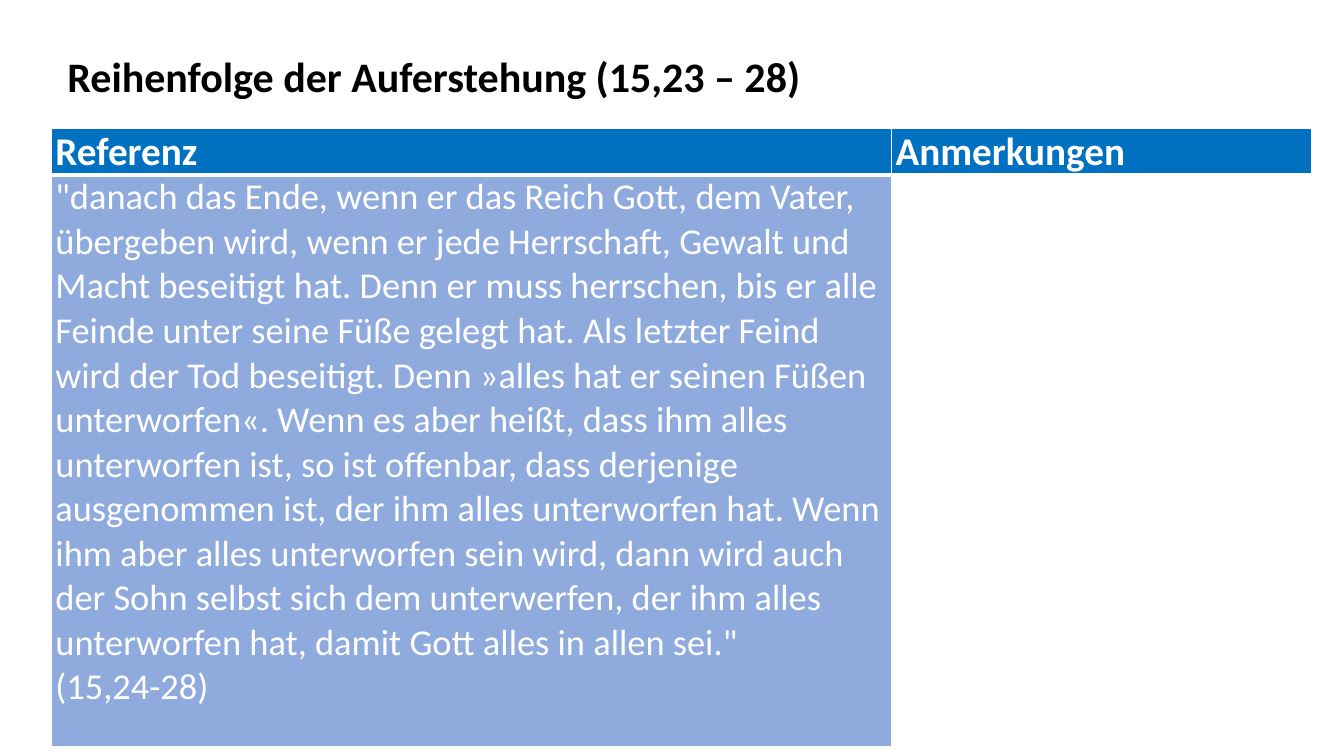
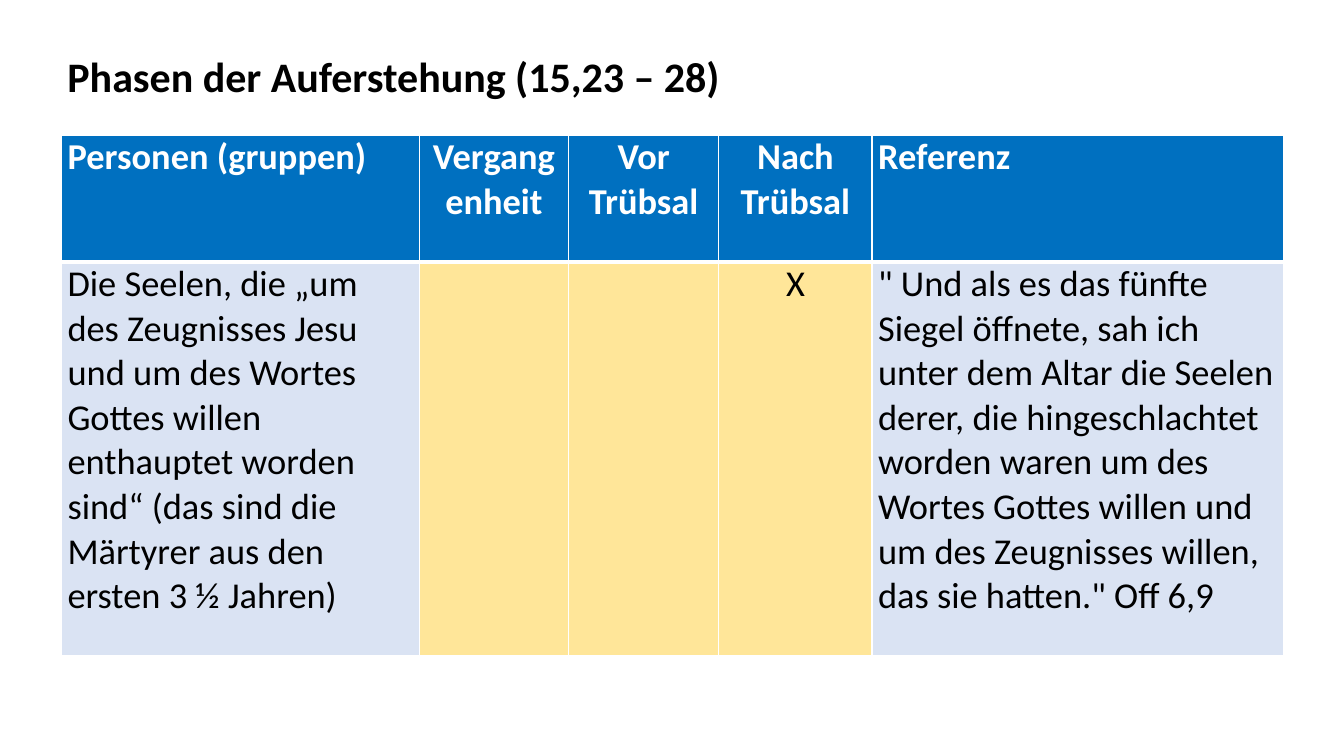
from lxml import etree
from pptx import Presentation
from pptx.dml.color import RGBColor
from pptx.enum.text import MSO_AUTO_SIZE, PP_ALIGN
from pptx.oxml.ns import qn
from pptx.util import Inches, Pt

LEFT, CENTER = PP_ALIGN.LEFT, PP_ALIGN.CENTER
FIT_SHAPE = MSO_AUTO_SIZE.SHAPE_TO_FIT_TEXT
FONT = "Calibri"
WHITE, BLACK = "FFFFFF", "000000"
HEADER_BLUE, MID_BLUE, PALE_BLUE, SAND = "0070C0", "8FAADC", "DAE3F3", "FFE699"
BLANK_LAYOUT = 6
HEADER_RULE, THIN_RULE = 3, 1

ENDE = (
    '"danach das Ende, wenn er das Reich Gott, dem Vater, übergeben wird, '
    "wenn er jede Herrschaft, Gewalt und Macht beseitigt hat. Denn er muss "
    "herrschen, bis er alle Feinde unter seine Füße gelegt hat. Als letzter "
    "Feind wird der Tod beseitigt. Denn »alles hat er seinen Füßen "
    "unterworfen«. Wenn es aber heißt, dass ihm alles unterworfen ist, so ist "
    "offenbar, dass derjenige ausgenommen ist, der ihm alles unterworfen hat. "
    "Wenn ihm aber alles unterworfen sein wird, dann wird auch der Sohn selbst "
    "sich dem unterwerfen, der ihm alles unterworfen hat, damit Gott alles in "
    'allen sei."\n(15,24-28)'
)
SEELEN = (
    "Die Seelen, die „um des Zeugnisses Jesu und um des Wortes Gottes willen "
    "enthauptet worden sind“ (das sind die Märtyrer aus den ersten 3 ½ Jahren)"
)
SIEGEL = (
    '" Und als es das fünfte Siegel öffnete, sah ich unter dem Altar die '
    "Seelen derer, die hingeschlachtet worden waren um des Wortes Gottes "
    'willen und um des Zeugnisses willen, das sie hatten." Off 6,9'
)


def rgb(color):
    return RGBColor.from_string(color)


def format_text(tf, size, color, bold, align=LEFT):
    for p in tf.paragraphs:
        p.alignment = align
        p.font.size = Pt(size)
        for r in p.runs:
            r.font.name = FONT
            r.font.size = Pt(size)
            r.font.bold = bold
            r.font.color.rgb = rgb(color)


def add_titled_slide(prs, title, width):
    s = prs.slides.add_slide(prs.slide_layouts[BLANK_LAYOUT])
    box = s.shapes.add_textbox(Inches(0.57), Inches(0.45), Inches(width), Inches(0.61))
    tf = box.text_frame
    tf.word_wrap = False
    tf.auto_size = FIT_SHAPE
    tf.text = title
    format_text(tf, 30, BLACK, True)
    return s


def add_borders(cell, bottom):
    tc_pr = cell._tc.get_or_add_tcPr()
    for side in "LRTB":
        width = bottom if side == "B" else THIN_RULE
        line = etree.SubElement(tc_pr, qn(f"a:ln{side}"), w=str(Pt(width)))
        fill = etree.SubElement(line, qn("a:solidFill"))
        etree.SubElement(fill, qn("a:srgbClr"), val=WHITE)


def style_cell(cell, text, fill, size, color, bold, align, inset, bottom):
    cell.margin_left = cell.margin_right = Inches(inset)
    cell.margin_top = cell.margin_bottom = 0
    add_borders(cell, bottom)
    cell.fill.solid()
    cell.fill.fore_color.rgb = rgb(fill)
    cell.text = text
    format_text(cell.text_frame, size, color, bold, align)


def add_reference_table(s, left, top, widths, heights, headers, body, fills,
                        aligns, header_size, body_color, inset):
    frame = s.shapes.add_table(
        len(heights), len(widths), Inches(left), Inches(top),
        Inches(sum(widths)), Inches(sum(heights)))
    table = frame.table
    for row, height in zip(table.rows, heights):
        row.height = Inches(height)
    for i, (width, align) in enumerate(zip(widths, aligns)):
        table.columns[i].width = Inches(width)
        style_cell(table.cell(0, i), headers[i], HEADER_BLUE, header_size,
                   WHITE, True, align, inset, HEADER_RULE)
        style_cell(table.cell(1, i), body[i], fills[i], 26,
                   body_color, False, align, inset, THIN_RULE)


def main():
    prs = Presentation()
    prs.slide_width, prs.slide_height = Inches(13.33), Inches(7.5)

    s = add_titled_slide(prs, "Reihenfolge der Auferstehung (15,23 – 28)", 7.56)
    add_reference_table(
        s, 0.51, 1.27, [12.5 * 2 / 3, 12.5 / 3], [0.46, 5.67],
        ["Referenz", "Anmerkungen"], [ENDE, ""], [MID_BLUE, WHITE],
        [LEFT, LEFT], 28, WHITE, 0.04)

    s = add_titled_slide(prs, "Phasen der Auferstehung (15,23 – 28)", 6.75)
    add_reference_table(
        s, 0.61, 1.34, [3.55, 1.48, 1.49, 1.52, 4.08], [1.26, 3.9],
        ["Personen (gruppen)", "Vergang\nenheit", "Vor Trübsal",
         "Nach Trübsal", "Referenz"],
        [SEELEN, "", "", "X", SIEGEL],
        [PALE_BLUE] + [SAND] * 3 + [PALE_BLUE],
        [LEFT] + [CENTER] * 3 + [LEFT], 26, BLACK, 0.06)

    prs.save("out.pptx")


if __name__ == "__main__":
    main()
